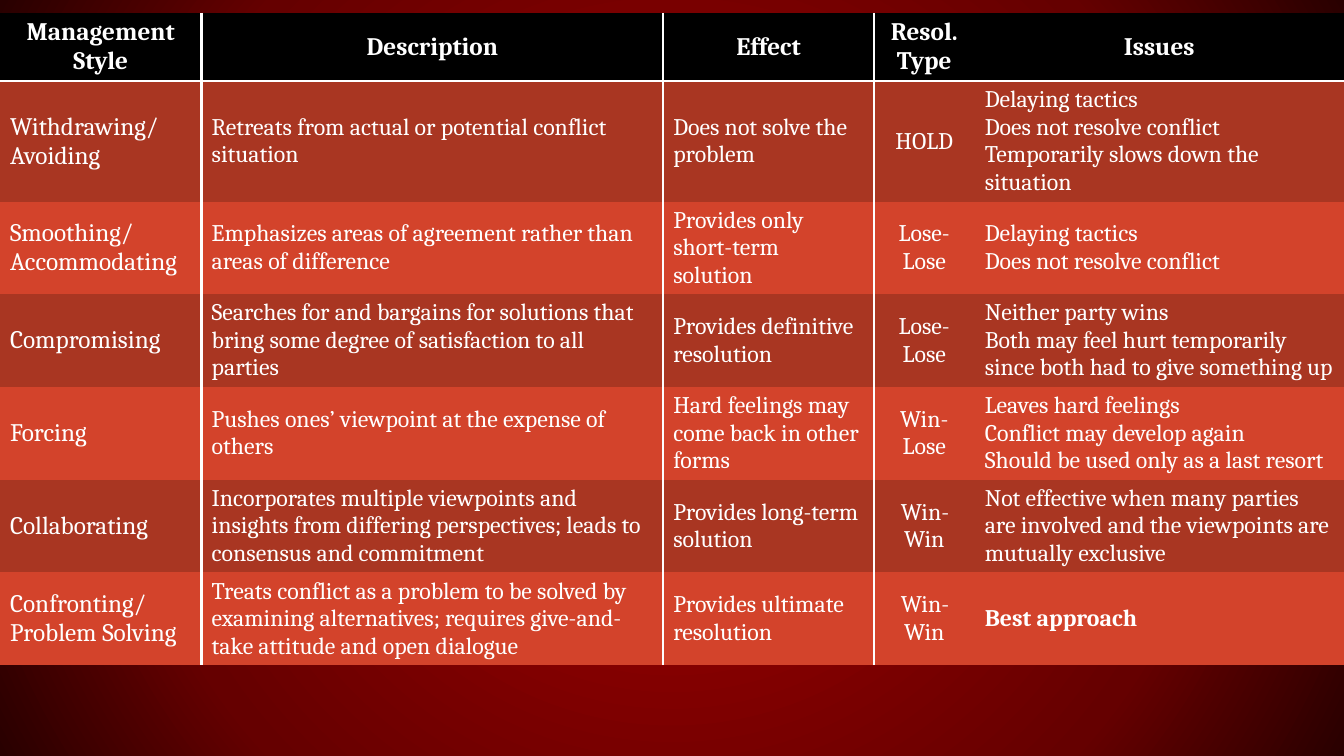
from lxml import etree
from pptx import Presentation
from pptx.dml.color import RGBColor
from pptx.enum import text
from pptx.oxml import ns
from pptx.util import Pt

WHITE, BLACK, DARK, LIGHT = "FFFFFF", "000000", "A93622", "D3432B"
NO_STYLE = "{2D5ABB26-0587-4C30-8999-92F81FD0307C}"
A = ns.nsdecls("a")

widths = [144, 329.75, 150.5, 72, 263.75]
rows = [
    ["Management Style", "Description", "Effect", "Resol. Type", "Issues"],
    ["Withdrawing/\nAvoiding",
     "Retreats from actual or potential conflict situation",
     "Does not solve the problem", "HOLD",
     "Delaying tactics\nDoes not resolve conflict\nTemporarily slows down the situation"],
    ["Smoothing/\nAccommodating",
     "Emphasizes areas of agreement rather than areas of difference",
     "Provides only short-term solution", "Lose-Lose",
     "Delaying tactics\nDoes not resolve conflict"],
    ["Compromising",
     "Searches for and bargains for solutions that bring some degree of satisfaction to all parties",
     "Provides definitive resolution", "Lose-Lose",
     "Neither party wins\nBoth may feel hurt temporarily since both had to give something up"],
    ["Forcing",
     "Pushes ones’ viewpoint at the expense of others",
     "Hard feelings may come back in other forms", "Win-Lose",
     "Leaves hard feelings\nConflict may develop again\nShould be used only as a last resort"],
    ["Collaborating",
     "Incorporates multiple viewpoints and insights from differing perspectives; "
     "leads to consensus and commitment",
     "Provides long-term solution", "Win-Win",
     "Not effective when many parties are involved and the viewpoints are mutually exclusive"],
    ["Confronting/ Problem Solving",
     "Treats conflict as a problem to be solved by examining alternatives; "
     "requires give-and-take attitude and open dialogue",
     "Provides ultimate resolution", "Win-Win", "Best approach"],
]


def write(cell, words, size=17, bold=False, center=False, fill=DARK):
    cell.fill.solid()
    cell.fill.fore_color.rgb = RGBColor.from_string(fill)
    cell.vertical_anchor = text.MSO_ANCHOR.MIDDLE
    cell.text = words
    for para in cell.text_frame.paragraphs:
        para.alignment = text.PP_ALIGN.CENTER if center else text.PP_ALIGN.LEFT
        font = para.runs[0].font
        font.name, font.size, font.bold = "Cambria", Pt(size), bold
        font.color.rgb = RGBColor.from_string(WHITE)


def edge(cell, sides):
    """Draw white borders; sides is a list of (side, points) in L, R, T, B order."""
    for i, (side, width) in enumerate(sides):
        line = etree.fromstring(
            f'<a:ln{side} {A} w="{int(Pt(width))}"><a:solidFill>'
            f'<a:srgbClr val="{WHITE}"/></a:solidFill></a:ln{side}>')
        cell._tc.get_or_add_tcPr().insert(i, line)


deck = Presentation()
deck.slide_width, deck.slide_height = Pt(960), Pt(540)
slide = deck.slides.add_slide(deck.slide_layouts[6])

# Radial background
slide.background.fill.solid()
solid = slide.element.find(".//" + ns.qn("a:solidFill"))
stops = "".join(f'<a:gs pos="{at * 1000}"><a:srgbClr val="{tone}"/></a:gs>'
                for at, tone in [(17, "960000"), (71, "650000"), (100, "290000")])
solid.getparent().replace(solid, etree.fromstring(
    f'<a:gradFill {A} rotWithShape="1"><a:gsLst>{stops}</a:gsLst><a:path path="circle">'
    '<a:fillToRect l="50000" t="50000" r="50000" b="50000"/></a:path></a:gradFill>'))

# Table; rows grow to fit their text
frame = slide.shapes.add_table(len(rows), len(widths), 0, Pt(9.25), Pt(960), Pt(522))
table = frame.table
table.horz_banding = False
table._tbl.tblPr.find(ns.qn("a:tableStyleId")).text = NO_STYLE
for col, width in zip(table.columns, widths):
    col.width = Pt(width)
for row in table.rows:
    row.height = Pt(29.5)

for r, row in enumerate(rows):
    head = r == 0
    fill = BLACK if head else DARK if r % 2 else LIGHT
    for c, words in enumerate(row):
        cell = table.cell(r, c)
        write(cell, words, size=18 if head or c == 0 else 17,
              bold=head or words == "Best approach",
              center=head or c == 3, fill=fill)
        sides = {0: [("R", 2.25)], 1: [("L", 2.25), ("R", 1.5)], 2: [("L", 1.5)]}.get(c, [])
        edge(cell, sides + ([("B", 2)] if head else []))

deck.save("out.pptx")
